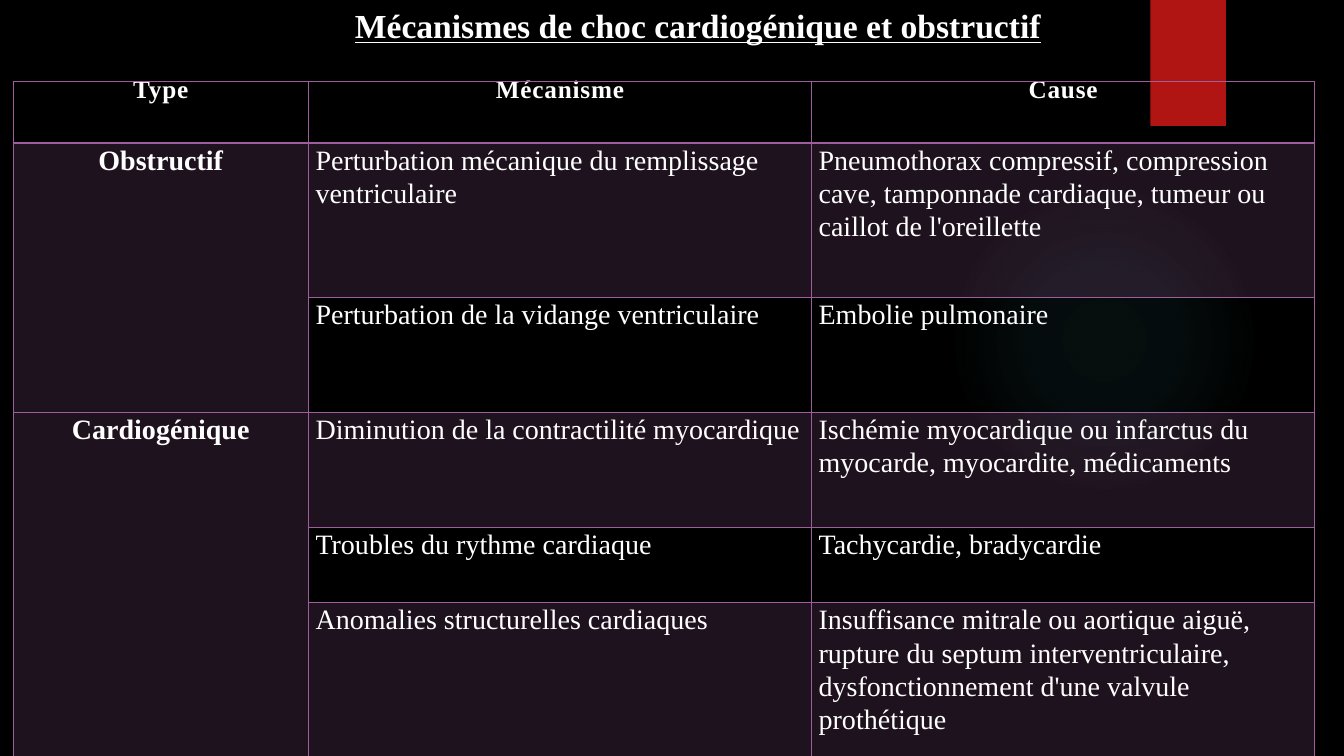
"""Build the slide on mechanisms of cardiogenic and obstructive shock."""
from dataclasses import dataclass

from lxml.etree import SubElement as Sub
from pptx import Presentation
from pptx.dml.color import RGBColor as RGB
from pptx.enum.shapes import MSO_SHAPE as Kind
from pptx.enum.text import MSO_ANCHOR as Anchor, PP_ALIGN as Align
from pptx.oxml.ns import qn
from pptx.util import Inches, Pt

TITLE = "Mécanismes de choc cardiogénique et obstructif"
HEAD = ("Type", "Mécanisme", "Cause")
GROUPS = {
    "Obstructif": [
        ("Perturbation mécanique du remplissage ventriculaire",
         "Pneumothorax compressif, compression cave, tamponnade cardiaque, "
         "tumeur ou caillot de l'oreillette"),
        ("Perturbation de la vidange ventriculaire", "Embolie pulmonaire"),
    ],
    "Cardiogénique": [
        ("Diminution de la contractilité myocardique",
         "Ischémie myocardique ou infarctus du myocarde, myocardite, médicaments"),
        ("Troubles du rythme cardiaque", "Tachycardie, bradycardie"),
        ("Anomalies structurelles cardiaques",
         "Insuffisance mitrale ou aortique aiguë, rupture du septum "
         "interventriculaire, dysfonctionnement d'une valvule prothétique"),
    ],
}
COLS = (2.93, 4.99, 4.99)
ROWS = (0.61, 1.53, 1.14, 1.14, 0.75, 1.53)
GLOW = ((0, 7), (36, 6), (69, 0), (100, 0))


@dataclass(frozen=True)
class Theme:
    """Colours, font and type sizes."""
    back: str = "000000"
    ink: str = "FFFFFF"
    line: str = "9E5E9B"
    flag: str = "B01513"
    glow: str = "50B9C1"
    font: str = "Times New Roman"
    title: int = 24
    head: int = 18
    body: int = 20


T = Theme()


def node(top, tag, **attrs):
    """Add a drawing element."""
    return Sub(top, qn("a:" + tag), {k: str(v) for k, v in attrs.items()})


def tint(top, hue, share):
    """Add a colour with a percentage of opacity."""
    node(node(top, "srgbClr", val=hue), "alpha", val=share * 1000)


def style(para, size, bold, align):
    """Set the type of a paragraph."""
    para.alignment = align
    font = para.font
    font.name, font.size, font.bold = T.font, Pt(size), bold
    font.color.rgb = RGB.from_string(T.ink)


def plain(slide, kind, *box):
    """Add a shape with neither line nor shadow."""
    shape = slide.shapes.add_shape(kind, *map(Inches, box))
    shape.shadow.inherit = False
    shape.line.fill.background()
    return shape


def decor(slide):
    """Add the glow and the red flag."""
    disc = plain(slide, Kind.OVAL, 9.41, 1.83, 3.08, 3.08)
    disc.fill.gradient()
    grad = disc._element.spPr.find(qn("a:gradFill"))
    for kid in list(grad):
        grad.remove(kid)
    stops = node(grad, "gsLst")
    for pos, share in GLOW:
        tint(node(stops, "gs", pos=pos * 1000), T.glow, share)
    node(node(grad, "path", path="circle"), "fillToRect",
         l=50000, t=50000, r=50000, b=50000)

    flag = plain(slide, Kind.RECTANGLE, 11.41, 0, 0.75, 1.25)
    flag.fill.solid()
    flag.fill.fore_color.rgb = RGB.from_string(T.flag)
    fx = flag._element.spPr.find(qn("a:effectLst"))
    shade = node(fx, "outerShdw", blurRad=Pt(3), dist=Pt(2), dir=5400000)
    tint(shade, T.back, 45)


def frame(cell, row, filled):
    """Set the margins, borders and fill of a cell."""
    cell.margin_left = cell.margin_right = Inches(0.07)
    cell.margin_top = cell.margin_bottom = 0
    props = cell._tc.get_or_add_tcPr()
    for side in "LRTB":
        thick = (row, side) in ((0, "B"), (1, "T"))
        edge = node(props, "ln" + side, w=Pt(2 if thick else 1))
        node(node(edge, "solidFill"), "srgbClr", val=T.line)
    if filled:
        tint(node(props, "solidFill"), T.line, 20)
    else:
        node(props, "noFill")


def fill_table(slide):
    """Add the table of types, mechanisms and causes."""
    lines = [HEAD]
    spans = []
    for name, items in GROUPS.items():
        spans.append((len(lines), len(lines) + len(items) - 1))
        lines += [(name if i == 0 else "", *item) for i, item in enumerate(items)]
    grid = slide.shapes.add_table(
        len(ROWS), len(COLS), *map(Inches, (0.13, 0.81, sum(COLS), sum(ROWS)))).table
    grid.first_row = grid.horz_banding = False
    for col, width in zip(grid.columns, COLS):
        col.width = Inches(width)
    for row, high in zip(grid.rows, ROWS):
        row.height = Inches(high)
    for start, end in spans:
        grid.cell(start, 0).merge(grid.cell(end, 0))
    shaded = {start + i for start, end in spans for i in range(0, end - start + 1, 2)}
    for r, texts in enumerate(lines):
        for c, text in enumerate(texts):
            cell = grid.cell(r, c)
            frame(cell, r, r in shaded or (r > 0 and c == 0))
            if not text:
                continue
            cell.text = text
            para = cell.text_frame.paragraphs[0]
            bold = r == 0 or c == 0
            para.line_spacing = 1.07 if r else Pt(15.9)
            style(para, T.body if r else T.head, bold,
                  Align.CENTER if bold else Align.LEFT)
            if r == 0:
                para.runs[0]._r.get_or_add_rPr().set("spc", "60")


def main():
    """Build and save the slide."""
    deck = Presentation()
    deck.slide_width, deck.slide_height = Inches(13.33), Inches(7.5)
    slide = deck.slides.add_slide(deck.slide_layouts[5])
    back = slide.background.fill
    back.solid()
    back.fore_color.rgb = RGB.from_string(T.back)
    decor(slide)
    fill_table(slide)
    title = slide.shapes.title
    title.left, title.top, title.width, title.height = map(
        Inches, (3.42, 0, 7.07, 0.81))
    title.text = TITLE
    area = title.text_frame
    area.word_wrap, area.vertical_anchor = False, Anchor.TOP
    para = area.paragraphs[0]
    style(para, T.title, True, Align.LEFT)
    para.font.underline = True
    deck.save("out.pptx")


if __name__ == "__main__":
    main()
